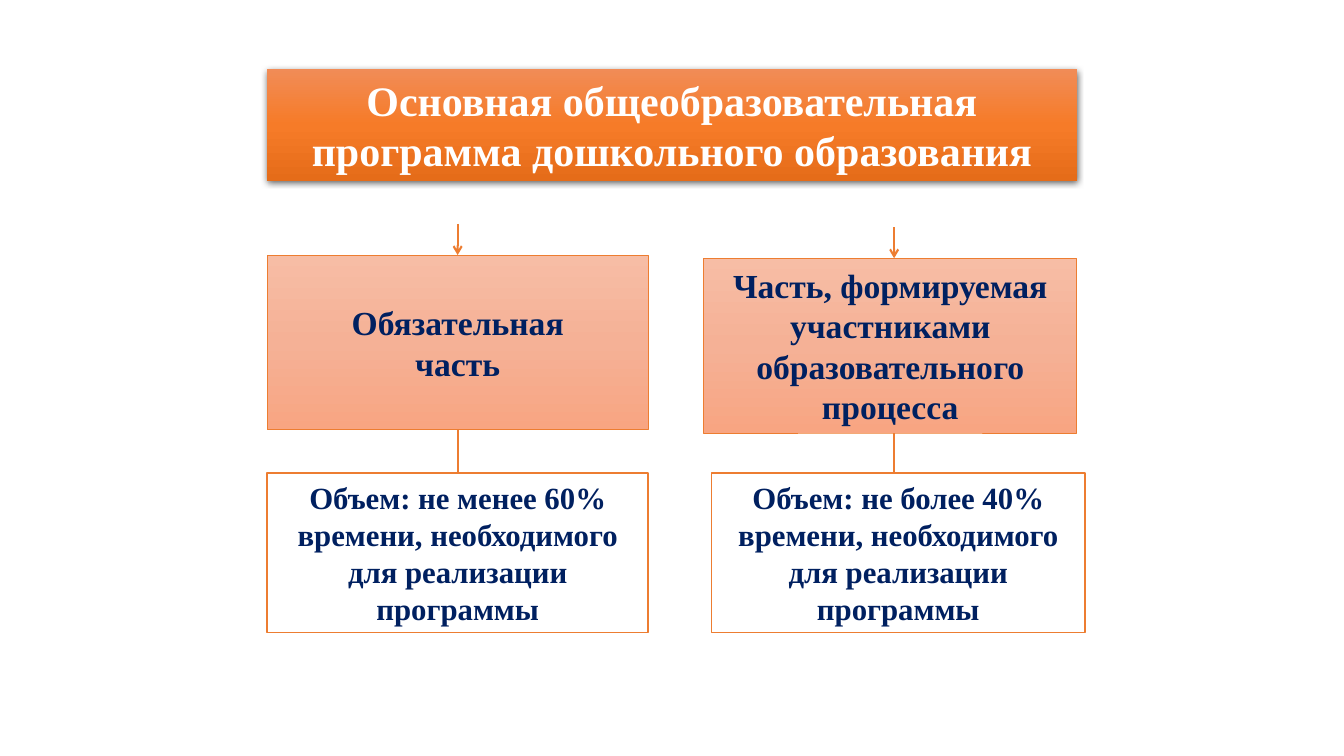
from copy import deepcopy

from lxml import etree
from pptx import Presentation
from pptx import util as u
from pptx.dml.color import RGBColor
from pptx.enum import shapes, text
from pptx.oxml.ns import qn

Pt = u.Pt
ORANGE, NAVY, WHITE = "ED7D31", "002060", "FFFFFF"
TITLE_GRADIENT = ("F18C57", "F67B28", "E56C19")
PART_GRADIENT = ("F7BDA5", "F5B196", "F8A582")
BOTTOM, TOP = 2, 0


def color(hex_value):
    return RGBColor.from_string(hex_value)


def fill_gradient(shape, colors):
    """Fill from top to bottom with three evenly spaced colours."""
    shape.fill.gradient()
    shape.fill.gradient_angle = 270
    stop_list = shape._element.spPr.find(qn("a:gradFill")).find(qn("a:gsLst"))
    stop_list.insert(1, deepcopy(stop_list[0]))
    for index, (stop, value) in enumerate(zip(shape.fill.gradient_stops, colors)):
        stop.position = index / 2
        stop.color.rgb = color(value)


def add_shadow(shape):
    effects = shape._element.spPr.find(qn("a:effectLst"))
    shadow = etree.SubElement(effects, qn("a:outerShdw"), blurRad=str(Pt(4.5)),
                              dist=str(Pt(1.5)), dir="5400000", rotWithShape="0")
    black = etree.SubElement(shadow, qn("a:srgbClr"), val="000000")
    etree.SubElement(black, qn("a:alpha"), val="63000")


def write_text(shape, content, size, font_color=NAVY, font="Times New Roman"):
    frame = shape.text_frame
    frame.word_wrap = True
    frame.vertical_anchor = text.MSO_ANCHOR.MIDDLE
    paragraph = frame.paragraphs[0]
    paragraph.text = content
    paragraph.alignment = text.PP_ALIGN.CENTER
    for run in paragraph.runs:
        run.font.name = font
        run.font.size = Pt(size)
        run.font.bold = True
        run.font.color.rgb = color(font_color)


def add_box(slide, left, top, width, height, line_width=None, gradient=None):
    shape = slide.shapes.add_shape(shapes.MSO_SHAPE.RECTANGLE,
                                   Pt(left), Pt(top), Pt(width), Pt(height))
    shape.shadow.inherit = False
    if gradient:
        fill_gradient(shape, gradient)
    else:
        shape.fill.solid()
        shape.fill.fore_color.rgb = color(WHITE)
    if line_width:
        shape.line.color.rgb = color(ORANGE)
        shape.line.width = Pt(line_width)
    else:
        shape.line.fill.background()
    return shape


def add_vertical_line(slide, x, top, bottom, arrow=False):
    connector = slide.shapes.add_connector(shapes.MSO_CONNECTOR.STRAIGHT,
                                           Pt(x), Pt(top), Pt(x), Pt(bottom))
    connector.line.color.rgb = color(ORANGE)
    connector.line.width = Pt(1.5)
    if arrow:
        etree.SubElement(connector.line._get_or_add_ln(), qn("a:tailEnd"), type="arrow")
    etree.SubElement(connector._element.spPr, qn("a:effectLst"))
    return connector


def add_title(slide, left, top, width, height):
    box = add_box(slide, left, top, width, height, gradient=TITLE_GRADIENT)
    add_shadow(box)
    write_text(box, "Основная общеобразовательная программа дошкольного образования",
               size=30, font_color=WHITE)


def add_branch(slide, left, top, width, part, volume, volume_top, volume_shift=0, axis_shift=0):
    """Draw an arrow, a programme part and its volume, one under another."""
    part_height, volume_height, arrow_length = 124.8, 113.8, 22.3
    part_box = add_box(slide, left, top, width, part_height, 0.5, PART_GRADIENT)
    write_text(part_box, part, size=24)
    volume_box = add_box(slide, left + volume_shift, volume_top, width, volume_height, 1)
    write_text(volume_box, volume, size=22)

    axis = left + width / 2 + axis_shift
    link = add_vertical_line(slide, axis, top + part_height, volume_top)
    arrow = add_vertical_line(slide, axis, top - arrow_length, top, arrow=True)
    if not axis_shift:
        link.begin_connect(part_box, BOTTOM)
        link.end_connect(volume_box, TOP)
        arrow.end_connect(part_box, TOP)


def main():
    presentation = Presentation()
    presentation.slide_width, presentation.slide_height = Pt(960), Pt(540)
    slide = presentation.slides.add_slide(presentation.slide_layouts[6])
    left, volume_top = 190.8, 337.8
    add_title(slide, left, 49, 578.4, 80)
    add_branch(slide, left, 182.2, 272.2, "Обязательная\nчасть",
               "Объем: не менее 60% времени, необходимого для реализации программы",
               volume_top)
    add_branch(slide, 502.6, 184.5, 266.6,
               "Часть, формируемая участниками образовательного процесса",
               "Объем: не более 40% времени, необходимого для реализации программы",
               volume_top, volume_shift=5.7, axis_shift=2.8)
    presentation.save("out.pptx")


if __name__ == "__main__":
    main()
